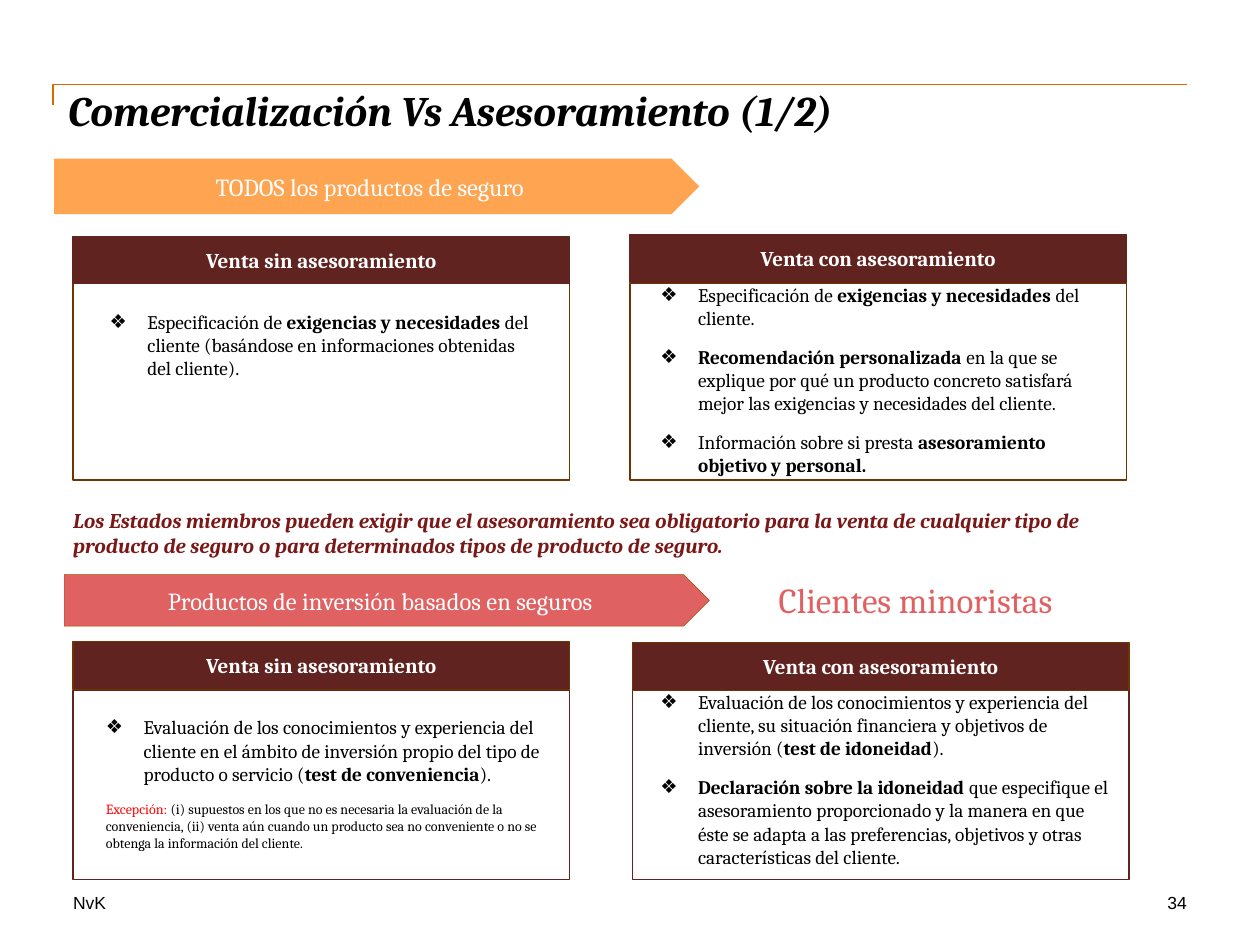
from lxml import etree
from pptx import Presentation
from pptx.dml.color import RGBColor
from pptx.enum.shapes import MSO_SHAPE
from pptx.enum.text import MSO_ANCHOR, MSO_AUTO_SIZE, PP_ALIGN
from pptx.oxml.ns import qn
from pptx.util import Inches, Pt

RECTANGLE, ARROW = MSO_SHAPE.RECTANGLE, MSO_SHAPE.PENTAGON
TOP, MIDDLE = MSO_ANCHOR.TOP, MSO_ANCHOR.MIDDLE
LEFT, CENTER, RIGHT = PP_ALIGN.LEFT, PP_ALIGN.CENTER, PP_ALIGN.RIGHT
NO_AUTOFIT = MSO_AUTO_SIZE.NONE

BLACK = RGBColor(0x00, 0x00, 0x00)
WHITE = RGBColor(0xFF, 0xFF, 0xFF)
RED = RGBColor(0xFF, 0x00, 0x00)
ORANGE = RGBColor(0xDC, 0x69, 0x00)
LIGHT_ORANGE = RGBColor(0xFF, 0xA4, 0x51)
ROSE = RGBColor(0xE0, 0x61, 0x61)
RUST = RGBColor(0xA3, 0x4E, 0x00)
BROWN = RGBColor(0x6E, 0x35, 0x00)
MAROON = RGBColor(0x60, 0x23, 0x20)
DARK_RED = RGBColor(0x7A, 0x18, 0x18)

COLUMNS, ROWS = 100, 75
COMPARISON_LAYOUT = 4


class SlideBuilder:
    """Places styled elements on a grid of 100 columns by 75 rows."""

    font_name = "Cambria"

    def __init__(self, presentation):
        self.column = presentation.slide_width / COLUMNS
        self.row = presentation.slide_height / ROWS
        layout = presentation.slide_layouts[COMPARISON_LAYOUT]
        self.slide = presentation.slides.add_slide(layout)

    def place(self, left, top, width, height):
        return (round(left * self.column), round(top * self.row),
                round(width * self.column), round(height * self.row))

    def style(self, paragraph, size, color, bold=False, italic=False,
              align=LEFT, font_name=None):
        font = paragraph.font
        font.name, font.size = font_name or self.font_name, Pt(size)
        font.bold, font.italic = bold, italic
        font.color.rgb = color
        paragraph.alignment = align

    def prepare(self, shape, anchor=TOP):
        frame = shape.text_frame
        frame.word_wrap, frame.auto_size = True, NO_AUTOFIT
        frame.vertical_anchor = anchor
        frame.margin_left = frame.margin_right = 0
        frame.margin_top = frame.margin_bottom = 0
        return frame

    def placeholder(self, index, box):
        shape = self.slide.placeholders[index]
        shape.left, shape.top, shape.width, shape.height = self.place(*box)
        return self.prepare(shape)

    def title(self, text, box):
        paragraph = self.placeholder(0, box).paragraphs[0]
        paragraph.text = text
        self.style(paragraph, 24, BLACK, bold=True, italic=True)

    def text(self, text, box, size, color, **style):
        frame = self.prepare(self.slide.shapes.add_textbox(*self.place(*box)))
        frame.text = text
        self.style(frame.paragraphs[0], size, color, **style)

    def shape(self, kind, box, fill=None, line=None, line_width=0.75):
        shape = self.slide.shapes.add_shape(kind, *self.place(*box))
        shape.shadow.inherit = False
        if fill is None:
            shape.fill.background()
        else:
            shape.fill.solid()
            shape.fill.fore_color.rgb = fill
        if line is None:
            shape.line.fill.background()
        else:
            shape.line.color.rgb = line
            shape.line.width = Pt(line_width)
        return shape

    def banner(self, text, box, fill, line=None):
        shape = self.shape(ARROW, box, fill, line, 0.25)
        shape.text_frame.vertical_anchor = MIDDLE
        shape.text_frame.text = text
        self.style(shape.text_frame.paragraphs[0], 14, WHITE, align=CENTER)

    def card(self, heading, heading_box, heading_line, panel_box, panel_line):
        self.shape(RECTANGLE, panel_box, line=panel_line)
        header = self.shape(RECTANGLE, heading_box, MAROON, heading_line)
        frame = self.prepare(header, MIDDLE)
        frame.text = heading
        self.style(frame.paragraphs[0], 12, WHITE, bold=True, align=CENTER)

    def bullets(self, index, box, items, exception=None):
        """Fills a body placeholder; asterisks enclose the emphasised words."""
        frame = self.placeholder(index, box)
        for number, item in enumerate(items):
            paragraph = frame.paragraphs[0] if number == 0 else frame.add_paragraph()
            self.list_paragraph(paragraph, item, 11, 0.5, -0.3, "❖")
        if exception:
            self.list_paragraph(frame.add_paragraph(), exception, 8, 0.2, 0)

    def list_paragraph(self, paragraph, text, size, margin, indent, bullet=None):
        self.style(paragraph, size, BLACK)
        paragraph.space_before, paragraph.space_after = Pt(0), Pt(9)
        properties = paragraph._p.get_or_add_pPr()
        properties.set("marL", str(Inches(margin)))
        properties.set("indent", str(Inches(indent)))
        tag = etree.Element(qn("a:buChar" if bullet else "a:buNone"))
        if bullet:
            tag.set("char", bullet)
        properties.find(qn("a:defRPr")).addprevious(tag)
        for number, part in enumerate(text.split("*")):
            if not part:
                continue
            run = paragraph.add_run()
            run.text = part
            if number % 2 and bullet:
                run.font.bold = True
            elif number % 2:
                run.font.color.rgb = RED

    def corner_rule(self, left, top, right, bottom):
        points = [self.place(x, y, 0, 0)[:2]
                  for x, y in ((left, bottom), (left, top), (right, top))]
        builder = self.slide.shapes.build_freeform(*points[0])
        builder.add_line_segments(points[1:], close=False)
        rule = builder.convert_to_shape()
        rule.shadow.inherit = False
        rule.fill.background()
        rule.line.color.rgb, rule.line.width = ORANGE, Pt(1)


def main():
    presentation = Presentation()
    presentation.slide_width, presentation.slide_height = Inches(10), Inches(7.5)
    page = SlideBuilder(presentation)

    # Title and rule
    page.corner_rule(4.2, 6.7, 94.2, 8.3)
    page.title("Comercialización Vs Asesoramiento (1/2)", (5.4, 6.7, 88.3, 3.9))

    # Section banners
    page.banner("TODOS los productos de seguro", (4.3, 12.6, 51.2, 4.4), LIGHT_ORANGE)
    page.banner("Productos de inversión basados en seguros",
                (5.1, 45.6, 51.2, 4.1), ROSE, RUST)
    page.text("Clientes minoristas", (61.8, 45.9, 26, 2.8), 20, ROSE)

    # Cards: left, heading top and height, panel top and height, line colours
    without_advice, with_advice = "Venta sin asesoramiento", "Venta con asesoramiento"
    for heading, left, top, height, panel_top, panel_height, line, panel_line in (
            (without_advice, 5.8, 18.8, 3.7, 22.5, 15.6, MAROON, BROWN),
            (with_advice, 50, 18.6, 3.8, 22.5, 15.6, MAROON, BROWN),
            (without_advice, 5.8, 50.9, 3.8, 54.8, 15, BROWN, MAROON),
            (with_advice, 50.2, 51, 3.8, 54.7, 15.1, BROWN, MAROON)):
        page.card(heading, (left, top, 39.4, height), line,
                  (left, panel_top, 39.4, panel_height), panel_line)

    # Lists
    page.bullets(1, (6.7, 24.6, 35.4, 10.2), [
        "Especificación de *exigencias y necesidades *del cliente "
        "(basándose en informaciones obtenidas del cliente)."])
    page.bullets(2, (50.4, 22.5, 38.2, 10.2), [
        "Especificación de *exigencias y necesidades *del cliente.",
        "*Recomendación personalizada *en la que se explique por qué un producto "
        "concreto satisfará mejor las exigencias y necesidades del cliente.",
        "Información sobre si presta *asesoramiento objetivo y personal.*"])
    page.bullets(3, (6.4, 56.8, 38.1, 10.2), [
        "Evaluación de los conocimientos y experiencia del cliente en el ámbito de "
        "inversión propio del tipo de producto o servicio (*test de conveniencia*)."],
        exception="*Excepción:* (i) supuestos en los que no es necesaria la evaluación "
        "de la conveniencia, (ii) venta aún cuando un producto sea no conveniente o "
        "no se obtenga la información del cliente.")
    page.bullets(4, (50.4, 54.8, 38.2, 10.2), [
        "Evaluación de los conocimientos y experiencia del cliente, su situación "
        "financiera y objetivos de inversión (*test de idoneidad*).",
        "*Declaración sobre la idoneidad *que especifique el asesoramiento "
        "proporcionado y la manera en que éste se adapta a las preferencias, "
        "objetivos y otras características del cliente."])

    # Remark between the sections
    page.text("Los Estados miembros pueden exigir que el asesoramiento sea obligatorio "
              "para la venta de cualquier tipo de producto de seguro o para determinados "
              "tipos de producto de seguro.",
              (5.8, 40.3, 83.6, 2.1), 12, DARK_RED, bold=True, italic=True)

    # Footer
    page.text("NvK", (5.8, 70.8, 28.3, 1.7), 10, BLACK, font_name="Arial")
    page.text("34", (77.5, 70.8, 16.7, 1.7), 10, BLACK, align=RIGHT, font_name="Arial")

    presentation.save("out.pptx")


if __name__ == "__main__":
    main()
